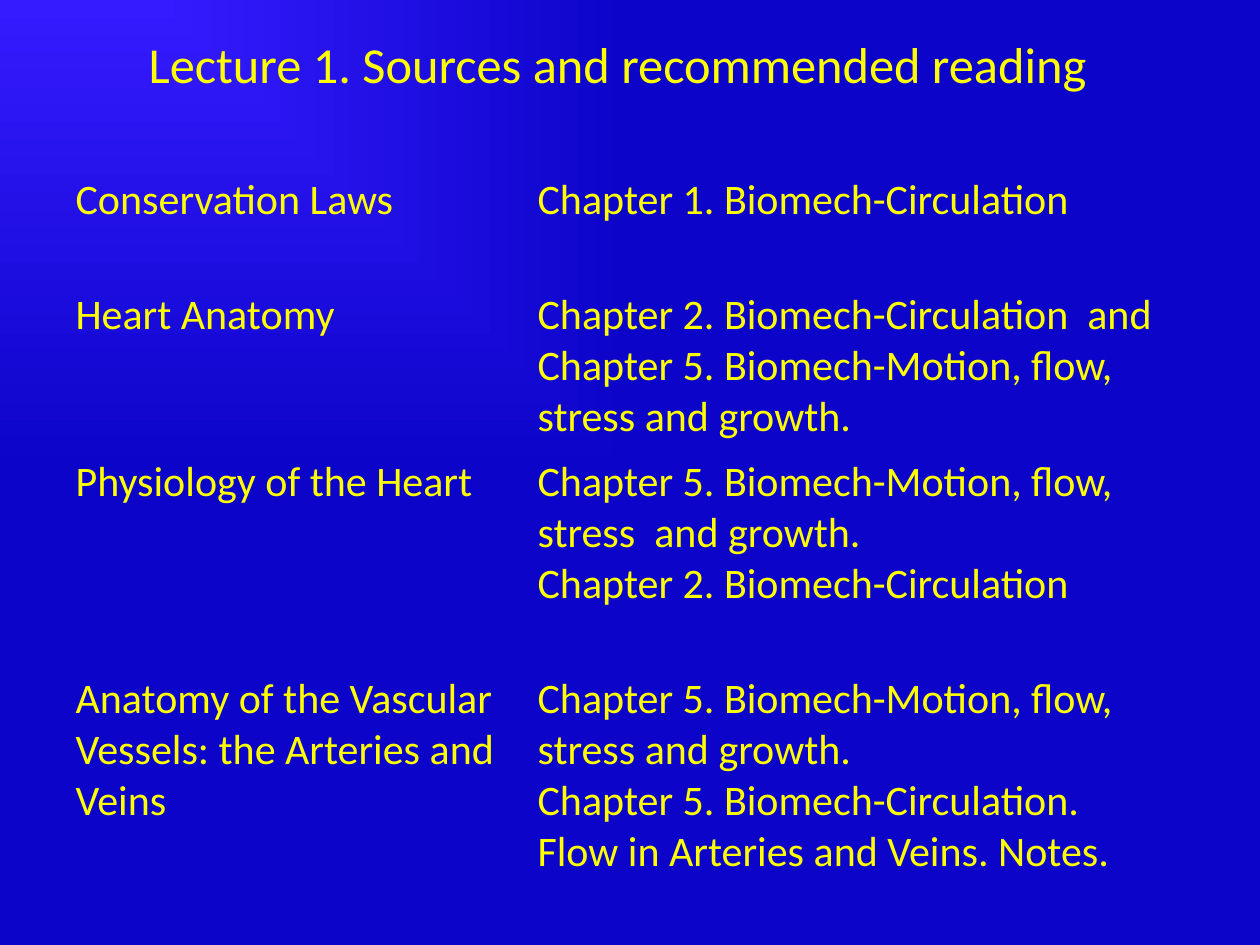
from pptx import Presentation
from pptx.dml.color import RGBColor
from pptx.enum.text import MSO_ANCHOR, MSO_AUTO_SIZE, PP_ALIGN
from pptx.oxml import parse_xml
from pptx.oxml.ns import nsdecls, qn
from pptx.util import Emu, Pt

LEFT, MIDDLE, NO_FIT = PP_ALIGN.LEFT, MSO_ANCHOR.MIDDLE, MSO_AUTO_SIZE.NONE
PX = 914400 // 126
NO_GRID_STYLE = "{2D5ABB26-0587-4C30-8999-92F81FD0307C}"
THEME = {
    "font": "Calibri",
    "text": RGBColor.from_string("FFFF00"),
    "glow": RGBColor.from_string("351BFF"),
    "base": RGBColor.from_string("0C04C9"),
    "title": Pt(28.8),
    "body": Pt(24),
}


def px(n):
    return Emu(n * PX)


def add_text(p, text, size):
    p.alignment = LEFT
    r = p.add_run()
    r.text = text
    r.font.name = THEME["font"]
    r.font.size = size
    r.font.color.rgb = THEME["text"]


prs = Presentation()
prs.slide_width, prs.slide_height = px(1260), px(945)
s = prs.slides.add_slide(prs.slide_layouts[5])

# Background: glow spreading from the top-left corner
fill = s.background.fill
fill.gradient()
for stop, color, position in zip(fill.gradient_stops, ("glow", "base"), (0, 1)):
    stop.color.rgb = THEME[color]
    stop.position = position
grad = s.element.find(".//" + qn("a:gradFill"))
grad.replace(grad.find(qn("a:lin")), parse_xml(
    f'<a:path {nsdecls("a")} path="rect">'
    '<a:fillToRect r="100000" b="100000"/></a:path>'))

# Title
title = s.shapes.title
title.left, title.top, title.width, title.height = px(136), px(21), px(1008), px(84)
tf = title.text_frame
tf.auto_size = NO_FIT
tf.word_wrap = True
tf.vertical_anchor = MIDDLE
add_text(tf.paragraphs[0], "Lecture 1. Sources and recommended reading", THEME["title"])

# Reading list: row height, topic, sources
readings = [
    (115, "Conservation Laws", ["Chapter 1. Biomech-Circulation"]),
    (167, "Heart Anatomy",
     ["Chapter 2. Biomech-Circulation  and Chapter 5. Biomech-Motion, flow, "
      "stress and growth."]),
    (217, "Physiology of the Heart",
     ["Chapter 5. Biomech-Motion, flow, stress  and growth.",
      "Chapter 2. Biomech-Circulation"]),
    (217, "Anatomy of the Vascular Vessels: the Arteries and Veins",
     ["Chapter 5. Biomech-Motion, flow, stress and growth.",
      "Chapter 5. Biomech-Circulation.",
      "Flow in Arteries and Veins. Notes."]),
]
heights = [height for height, _, _ in readings]
frame = s.shapes.add_table(len(readings), 2, px(63), px(168), px(1165), px(sum(heights)))
table = frame.table
table.first_row = table.horz_banding = False
frame.element.find(".//" + qn("a:tableStyleId")).text = NO_GRID_STYLE
for column, width in zip(table.columns, (462, 703)):
    column.width = px(width)

for row, (height, topic, sources) in zip(table.rows, readings):
    row.height = px(height)
    for cell, lines in zip(row.cells, ([topic], sources)):
        cell.fill.background()
        tf = cell.text_frame
        for i, line in enumerate(lines):
            p = tf.add_paragraph() if i else tf.paragraphs[0]
            add_text(p, line, THEME["body"])

prs.save("out.pptx")
